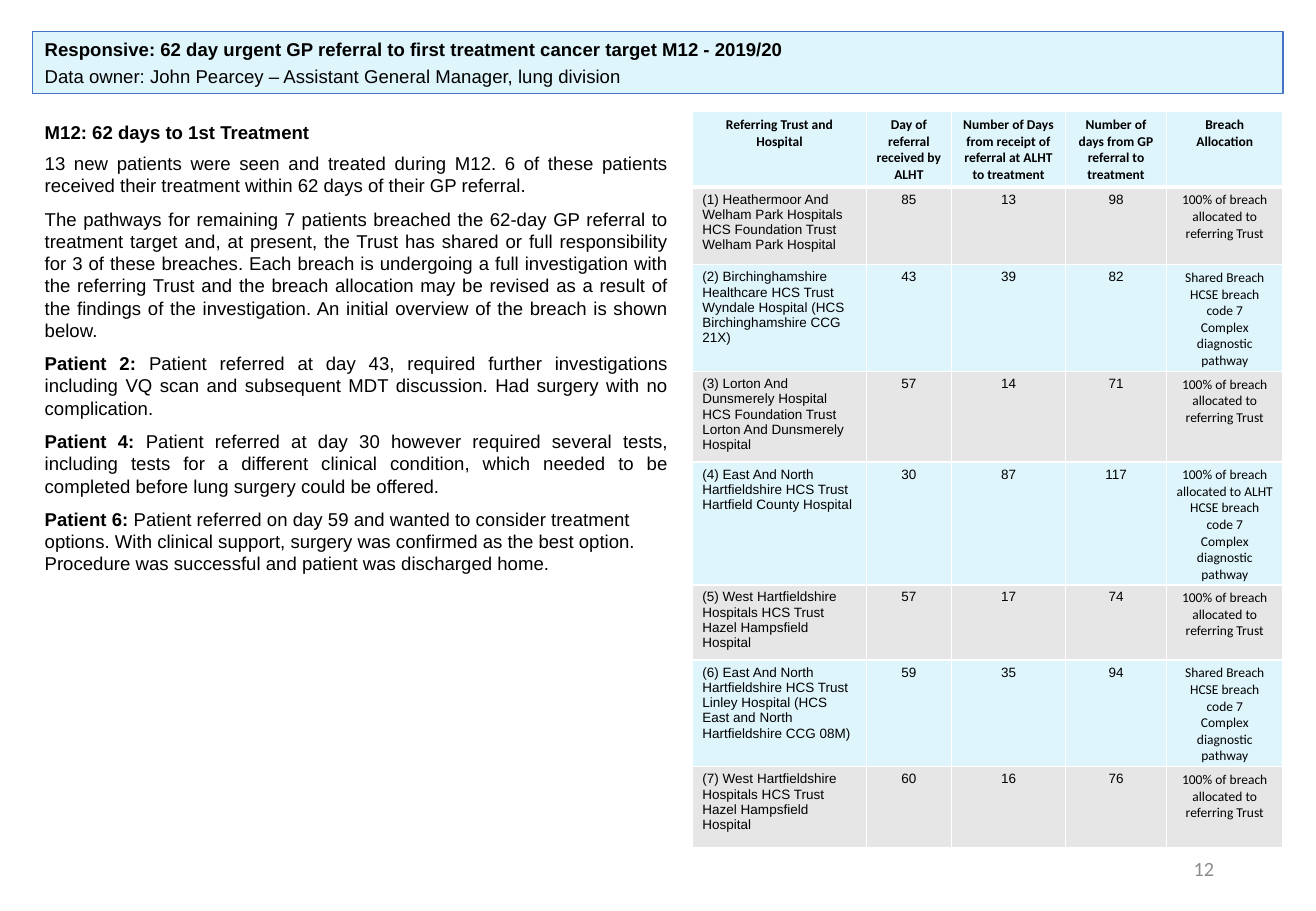
from lxml import etree
from pptx import Presentation
from pptx import util as u
from pptx.dml.color import RGBColor
from pptx.enum import shapes, text
from pptx.oxml.ns import qn

# Content
TITLE = [
    ("Responsive: 62 day urgent GP referral to first treatment cancer target M12 - 2019/20", ""),
    ("", "Data owner: John Pearcey – Assistant General Manager, lung division"),
]
HEADING = ("M12: 62 days to 1st Treatment", "")
NARRATIVE = [
    ("", "13 new patients were seen and treated during M12. 6 of these patients received "
         "their treatment within 62 days of their GP referral."),
    ("", "The pathways for remaining 7 patients breached the 62-day GP referral to treatment "
         "target and, at present, the Trust has shared or full responsibility for 3 of these "
         "breaches. Each breach is undergoing a full investigation with the referring Trust and "
         "the breach allocation may be revised as a result of the findings of the investigation. "
         "An initial overview of the breach is shown below."),
    ("Patient 2: ", "Patient referred at day 43, required further investigations including VQ "
                    "scan and subsequent MDT discussion. Had surgery with no complication."),
    ("Patient 4:", " Patient referred at day 30 however required several tests, including tests "
                   "for a different clinical condition, which needed to be completed before lung "
                   "surgery could be offered."),
]
CLOSING = ("Patient 6: ", "Patient referred on day 59 and wanted to consider treatment options. "
                          "With clinical support, surgery was confirmed as the best option. "
                          "Procedure was successful and patient was discharged home.")
PAGE_NUMBER = "12"

HEADERS = ["Referring Trust and Hospital", "Day of referral received by ALHT",
           "Number of Days from receipt of referral at ALHT to treatment",
           "Number of days from GP referral to treatment", "Breach Allocation"]
REFERRER = ["100% of breach allocated to referring Trust"]
CODE_7 = ["HCSE breach code 7", "Complex diagnostic pathway"]
SHARED = ["Shared Breach"] + CODE_7
OWN = ["100% of breach allocated to ALHT"] + CODE_7
PATIENTS = [
    ("(1) Heathermoor And Welham Park Hospitals HCS Foundation Trust Welham Park Hospital",
     85, 13, 98, REFERRER),
    ("(2) Birchinghamshire Healthcare HCS Trust Wyndale Hospital (HCS Birchinghamshire CCG 21X)",
     43, 39, 82, SHARED),
    ("(3) Lorton And Dunsmerely Hospital HCS Foundation Trust Lorton And Dunsmerely Hospital",
     57, 14, 71, REFERRER),
    ("(4) East And North Hartfieldshire HCS Trust Hartfield County Hospital", 30, 87, 117, OWN),
    ("(5) West Hartfieldshire Hospitals HCS Trust Hazel Hampsfield Hospital",
     57, 17, 74, REFERRER),
    ("(6) East And North Hartfieldshire HCS Trust Linley Hospital "
     "(HCS East and North Hartfieldshire CCG 08M)", 59, 35, 94, SHARED),
    ("(7) West Hartfieldshire Hospitals HCS Trust Hazel Hampsfield Hospital",
     60, 16, 76, REFERRER),
]

# Layout: places are percent of the slide, table tracks are inches
WIDTH, HEIGHT = u.Inches(10.83), u.Inches(7.5)
TITLE_AT = (2.49, 3.47, 95.01, 6.8)
NARRATIVE_AT = (2.49, 12.67, 49.22, 52)
TABLE_AT = (52.63, 12.27, 44.88, 61.87)
NUMBER_AT = (70.64, 92.67, 22.53, 5.33)
COLUMNS = [1.43, 0.7, 0.94, 0.83, 0.96]
ROWS = [0.62, 0.64] + [0.62] * (len(PATIENTS) - 2) + [0.67]
PALE, GREY, WHITE, BLUE = "DFF5FC", "E7E6E6", "FFFFFF", "4472C4"
LEFT, CENTER, RIGHT, JUSTIFY = (text.PP_ALIGN.LEFT, text.PP_ALIGN.CENTER,
                                text.PP_ALIGN.RIGHT, text.PP_ALIGN.JUSTIFY)


def color(value):
    return RGBColor.from_string(value)


def place(left, top, width, height):
    return [round(share * side / 100) for share, side in
            zip((left, top, width, height), (WIDTH, HEIGHT, WIDTH, HEIGHT))]


def write(frame, lines, size=11, font="Arial", ink="000000", align=LEFT, after=0):
    """Append (bold, regular) lines to a frame."""
    for line in lines:
        para = frame.paragraphs[0]
        if para.runs:
            para = frame.add_paragraph()
        para.alignment = align
        para.space_after = u.Pt(after)
        for words, bold in zip(line, (True, False)):
            if words:
                span = para.add_run()
                span.text = words
                span.font.size, span.font.name, span.font.bold = u.Pt(size), font, bold
                span.font.color.rgb = color(ink)


def add_borders(cell, row):
    props = cell._tc.get_or_add_tcPr()
    heavy = {(0, "lnB"), (1, "lnT")}
    for index, side in enumerate(("lnL", "lnR", "lnT", "lnB")):
        points = 3 if (row, side) in heavy else 1
        line = etree.Element(qn("a:" + side), w=str(u.Pt(points)))
        fill = etree.SubElement(line, qn("a:solidFill"))
        etree.SubElement(fill, qn("a:srgbClr"), val=WHITE)
        props.insert(index, line)


def add_text_box(page, at):
    frame = page.shapes.add_textbox(*place(*at)).text_frame
    frame.word_wrap = True
    return frame


def add_title(page):
    box = page.shapes.add_shape(shapes.MSO_SHAPE.RECTANGLE, *place(*TITLE_AT))
    box.shadow.inherit = False
    box.fill.solid()
    box.fill.fore_color.rgb = color(PALE)
    box.line.color.rgb = color(BLUE)
    box.line.width = u.Pt(0.75)
    box.text_frame.word_wrap = True
    box.text_frame.vertical_anchor = text.MSO_ANCHOR.TOP
    box.text_frame.auto_size = text.MSO_AUTO_SIZE.SHAPE_TO_FIT_TEXT
    write(box.text_frame, TITLE, after=3)


def add_narrative(page):
    frame = add_text_box(page, NARRATIVE_AT)
    frame.auto_size = text.MSO_AUTO_SIZE.SHAPE_TO_FIT_TEXT
    write(frame, [HEADING], after=4.9)
    write(frame, NARRATIVE, align=JUSTIFY, after=6.5)
    write(frame, [CLOSING])


def add_breach_table(page):
    table = page.shapes.add_table(len(ROWS), len(COLUMNS), *place(*TABLE_AT)).table
    table.horz_banding = False
    for column, width in zip(table.columns, COLUMNS):
        column.width = u.Inches(width)
    for row, height in zip(table.rows, ROWS):
        row.height = u.Inches(height)
    for r, values in enumerate([HEADERS] + PATIENTS):
        for c, value in enumerate(values):
            cell = table.cell(r, c)
            cell.margin_left = cell.margin_right = u.Inches(0.08)
            cell.margin_top = cell.margin_bottom = u.Inches(0.04)
            cell.fill.solid()
            cell.fill.fore_color.rgb = color(GREY if r % 2 else PALE)
            add_borders(cell, r)
            items = value if isinstance(value, list) else [str(value)]
            lines = [("", item) if r else (item, "") for item in items]
            write(cell.text_frame, lines, size=8,
                  font="Calibri" if r == 0 or c == 4 else "Arial",
                  align=LEFT if r and c == 0 else CENTER)


def add_page_number(page):
    frame = add_text_box(page, NUMBER_AT)
    frame.vertical_anchor = text.MSO_ANCHOR.MIDDLE
    write(frame, [("", PAGE_NUMBER)], size=12, font="Calibri", ink="8C8C8C", align=RIGHT)


def main():
    deck = Presentation()
    deck.slide_width, deck.slide_height = WIDTH, HEIGHT
    page = deck.slides.add_slide(deck.slide_layouts[6])
    add_title(page)
    add_narrative(page)
    add_breach_table(page)
    add_page_number(page)
    deck.save("out.pptx")


if __name__ == "__main__":
    main()
